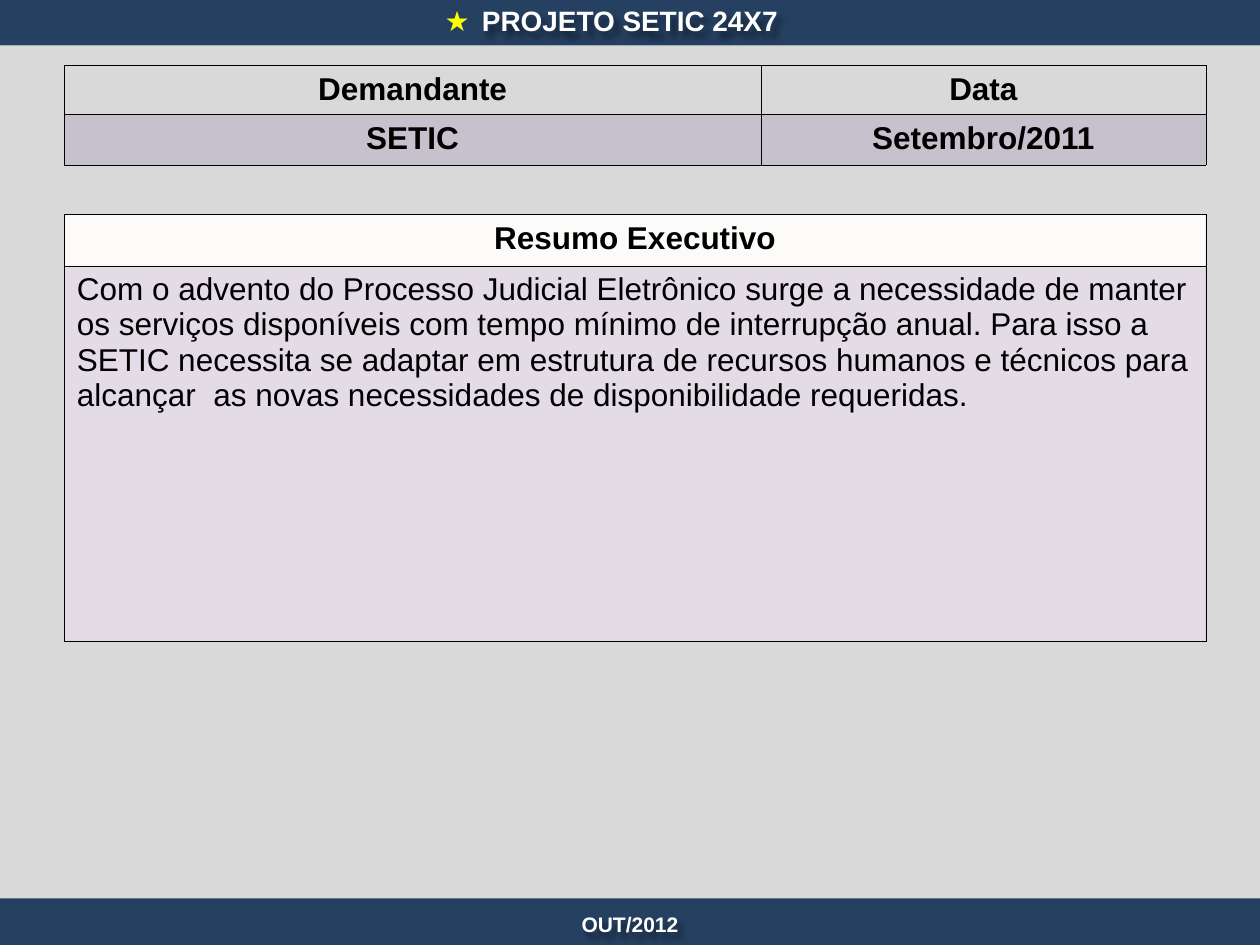
from lxml import etree
from pptx import Presentation
from pptx.dml.color import RGBColor
from pptx.enum import shapes, text
from pptx.oxml import parse_xml
from pptx.oxml.ns import nsdecls, qn
from pptx.util import Inches, Pt

NAVY, WHITE, BLACK = "254061", "FFFFFF", "000000"
TINT = "8064A2"
MID = text.PP_ALIGN.CENTER
LEFT, WIDE = 0.51, 9.06

RECTS = [
    ((0, 0.36, 10, 6.85), "D9D9D9"),
    ((0, 7.13, 10, 0.37), NAVY),
    ((0, -0.01, 10, 0.37), NAVY),
    ((LEFT, 1.7, WIDE, 3.39), "FCFBF9"),
]
HEAD = {"size": Pt(18), "bold": True, "color": BLACK}
BODY = {**HEAD, "bold": False}
LABELS = [
    ("OUT/2012", (0, 7.14, 10, 0.39), {"size": Pt(12), "bold": True, "color": WHITE}, MID, True),
    ("PROJETO SETIC 24X7", (0, -0.11, 10, 0.55), {"size": Pt(16), "bold": True, "color": WHITE}, MID, True),
    ("★", (3.43, -0.02, 0.47, 0.37), {"size": Pt(16), "color": "FFFF00"}, None, False),
]
SUMMARY = (
    "Com o advento do Processo Judicial Eletrônico surge a necessidade de manter "
    "os serviços disponíveis com tempo mínimo de interrupção anual. Para isso a "
    "SETIC necessita se adaptar em estrutura de recursos humanos e técnicos para "
    "alcançar  as novas necessidades de disponibilidade requeridas."
)
TABLES = [
    (0.52, [5.53, 3.53], [0.39, 0.4],
     [["Demandante", "Data"], ["SETIC", "Setembro/2011"]], HEAD, MID),
    (1.7, [WIDE], [0.41, 2.98],
     [["Resumo Executivo"], [SUMMARY]], BODY, None),
]


def rgb(code):
    return RGBColor.from_string(code)


def write(para, words, form, align):
    para.alignment = align
    run = para.add_run()
    run.text = words
    run.font.name = "Arial"
    for key, val in form.items():
        if key == "color":
            run.font.fill.solid()
            run.font.color.rgb = rgb(val)
        else:
            setattr(run.font, key, val)


def band(slide, place, fill):
    box = slide.shapes.add_shape(shapes.MSO_SHAPE.RECTANGLE, *map(Inches, place))
    box.shadow.inherit = False
    box.fill.solid()
    box.fill.fore_color.rgb = rgb(fill)
    box.line.fill.background()


def label(slide, words, place, form, align, shade):
    box = slide.shapes.add_textbox(*map(Inches, place))
    box.text_frame.word_wrap = True
    box.text_frame.vertical_anchor = text.MSO_ANCHOR.MIDDLE if shade else text.MSO_ANCHOR.TOP
    write(box.text_frame.paragraphs[0], words, form, align)
    if shade:
        box._element.spPr.append(parse_xml(
            f'<a:effectLst {nsdecls("a")}><a:outerShdw blurRad="38100" dist="38100" dir="2700000">'
            '<a:srgbClr val="000000"><a:alpha val="43000"/></a:srgbClr>'
            '</a:outerShdw></a:effectLst>'))


def border(cell):
    props = cell._tc.get_or_add_tcPr()
    for side in ("lnL", "lnR", "lnT", "lnB"):
        props.append(parse_xml(
            f'<a:{side} {nsdecls("a")} w="3175"><a:solidFill>'
            f'<a:srgbClr val="{BLACK}"/></a:solidFill></a:{side}>'))


def tint(cell):
    cell.fill.solid()
    cell.fill.fore_color.rgb = rgb(TINT)
    tone = cell._tc.tcPr.find(qn("a:solidFill"))[0]
    etree.SubElement(tone, qn("a:alpha")).set("val", "20000")


def table(slide, top, cols, rows, cells, form, align):
    place = map(Inches, (LEFT, top, sum(cols), sum(rows)))
    grid = slide.shapes.add_table(len(rows), len(cols), *place).table
    grid.first_row = grid.horz_banding = False
    for col, size in zip(grid.columns, cols):
        col.width = Inches(size)
    for r, line in enumerate(cells):
        grid.rows[r].height = Inches(rows[r])
        for c, words in enumerate(line):
            cell = grid.cell(r, c)
            border(cell)
            if r:
                tint(cell)
                write(cell.text_frame.paragraphs[0], words, form, align)
            else:
                cell.fill.background()
                write(cell.text_frame.paragraphs[0], words, HEAD, MID)


def main():
    deck = Presentation()
    deck.slide_width, deck.slide_height = Inches(10), Inches(7.5)
    slide = deck.slides.add_slide(deck.slide_layouts[6])
    for item in RECTS:
        band(slide, *item)
    for item in TABLES:
        table(slide, *item)
    for item in LABELS:
        label(slide, *item)
    deck.save("out.pptx")


if __name__ == "__main__":
    main()
